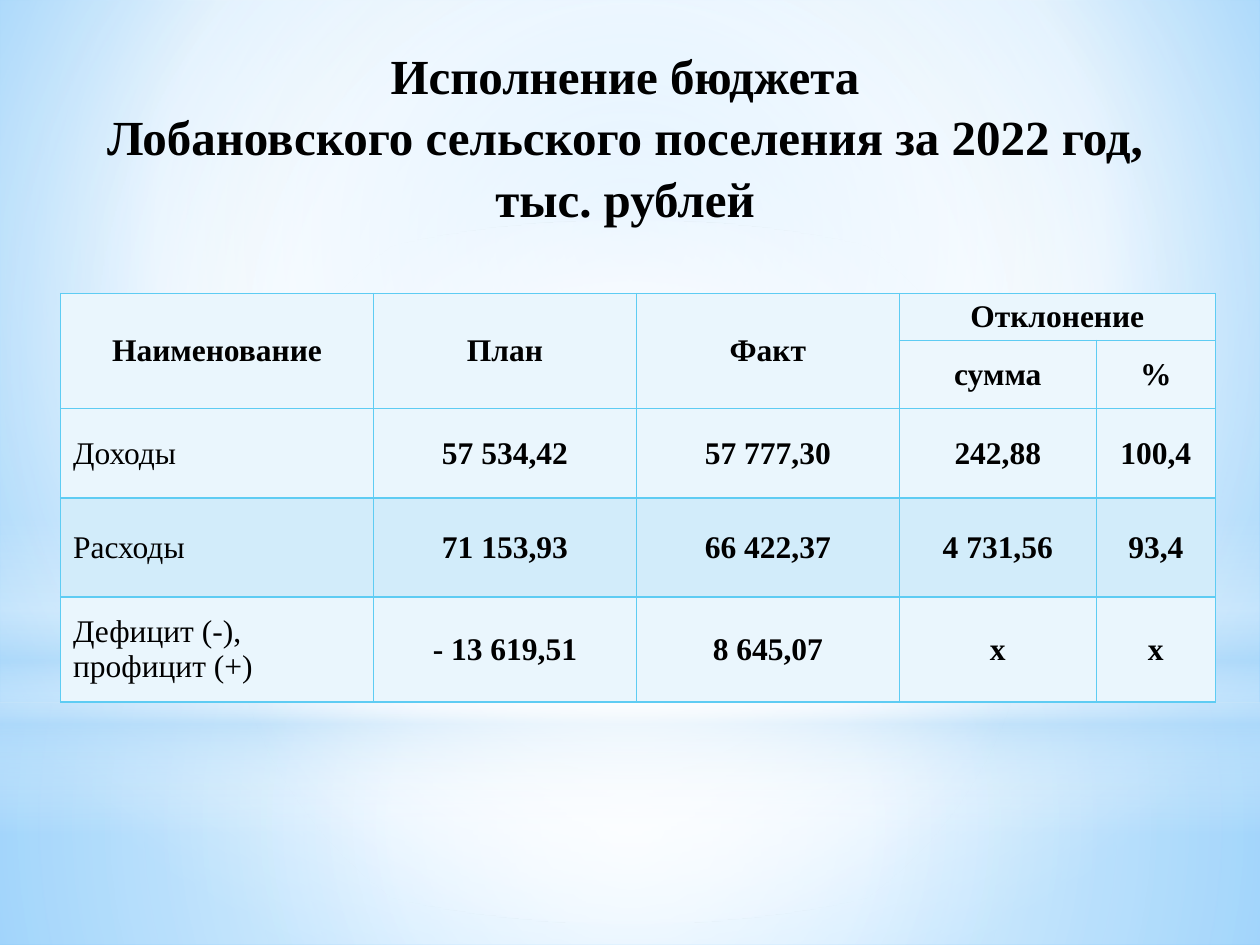
"""Builds a slide with the budget execution table of a rural settlement."""
from lxml.etree import SubElement
from pptx import Presentation
from pptx.dml.color import RGBColor
from pptx.enum.shapes import MSO_SHAPE
from pptx.enum.text import MSO_ANCHOR, PP_ALIGN
from pptx.oxml import parse_xml
from pptx.oxml.ns import nsdecls, qn
from pptx.util import Cm, Pt

FONT = "Times New Roman"
BLACK = RGBColor(0x00, 0x00, 0x00)
WHITE = RGBColor(0xFF, 0xFF, 0xFF)
HAZE = RGBColor(0xB4, 0xDC, 0xFA)
SKY = RGBColor(0x9E, 0xD5, 0xFF)
DEEP_SKY = RGBColor(0x5B, 0xB9, 0xFF)
BORDER = RGBColor(0x5E, 0xCC, 0xF3)
PALE = RGBColor(0xEA, 0xF6, 0xFD)
SUBHEADER = RGBColor(0xED, 0xF7, 0xFD)
BAND = RGBColor(0xD2, 0xEC, 0xFA)

TITLE = ["Исполнение бюджета\vЛобановского сельского поселения за 2022 год,", "тыс. рублей"]
ROWS = [
    ["Наименование", "План", "Факт", "Отклонение", ""],
    ["", "", "", "сумма", "%"],
    ["Доходы", "57 534,42", "57 777,30", "242,88", "100,4"],
    ["Расходы", "71 153,93", "66 422,37", "4 731,56", "93,4"],
    ["Дефицит (-), профицит (+)", "- 13 619,51", "8 645,07", "х", "х"],
]
ROW_FILLS = [PALE, SUBHEADER, PALE, BAND, PALE]
ROW_HEIGHTS = [0.94, 1.38, 1.8, 2.0, 2.11]
COLUMN_WIDTHS = [6.31, 5.3, 5.3, 3.97, 2.4]
MERGES = [((0, 0), (1, 0)), ((0, 1), (1, 1)), ((0, 2), (1, 2)), ((0, 3), (0, 4))]
HEADER_ROWS = 2

CENTRE = (50, 50, 50, 50)
BACKDROP = [(0, SKY, 100), (60, WHITE, 100), (100, DEEP_SKY, 100)]
GLOWS = [
    (MSO_SHAPE.RECTANGLE, 14.17, 4.88, CENTRE,
     [(0, WHITE, 91), (37, WHITE, 76), (100, HAZE, 79)]),
    (MSO_SHAPE.RECTANGLE, 0, 14.17, CENTRE,
     [(0, WHITE, 89), (48, WHITE, 62), (100, HAZE, 79)]),
    (MSO_SHAPE.RECTANGLE, 10.46, 6.35, None,
     [(0, WHITE, 0), (29, WHITE, 30), (45, HAZE, 40), (55, WHITE, 26),
      (65, HAZE, 60), (100, WHITE, 0)]),
    (MSO_SHAPE.OVAL, 4.45, 14.17, CENTRE, [(0, WHITE, 100), (56, WHITE, 0)]),
]


def apply_gradient(fill, element, stops, focus):
    """Swap a solid fill for a circular gradient, or a vertical one without focus."""
    fill.solid()
    solid = element.find(".//" + qn("a:solidFill"))
    gradient = parse_xml(f'<a:gradFill {nsdecls("a")} rotWithShape="1"><a:gsLst/></a:gradFill>')
    for position, color, opacity in stops:
        stop = SubElement(gradient[0], qn("a:gs"), pos=str(position * 1000))
        shade = SubElement(stop, qn("a:srgbClr"), val=str(color))
        if opacity < 100:
            SubElement(shade, qn("a:alpha"), val=str(opacity * 1000))
    if focus:
        circle = SubElement(gradient, qn("a:path"), path="circle")
        edges = {side: str(share * 1000) for side, share in zip("ltrb", focus)}
        SubElement(circle, qn("a:fillToRect"), **edges)
    else:
        SubElement(gradient, qn("a:lin"), ang="5400000", scaled="0")
    solid.getparent().replace(solid, gradient)


def write_text(frame, paragraphs, size=18, bold=True, align=PP_ALIGN.CENTER, spacing=1.0):
    """Fill a text frame with formatted paragraphs."""
    frame.word_wrap = True
    frame.text = "\n".join(paragraphs)
    for paragraph in frame.paragraphs:
        paragraph.alignment = align
        paragraph.line_spacing = spacing
        for run in paragraph.runs:
            run.font.name, run.font.size = FONT, Pt(size)
            run.font.bold, run.font.color.rgb = bold, BLACK


def add_borders(cell):
    """Draw a thin line on all four sides of a cell."""
    properties = cell._tc.get_or_add_tcPr()
    for index, side in enumerate("LRTB"):
        properties.insert(index, parse_xml(
            f'<a:ln{side} {nsdecls("a")} w="{Pt(1)}"><a:solidFill>'
            f'<a:srgbClr val="{BORDER}"/></a:solidFill></a:ln{side}>'))


def add_glows(slide, width):
    """Lay the soft light shapes over the background."""
    for preset, top, height, focus, stops in GLOWS:
        glow = slide.shapes.add_shape(preset, 0, Cm(top), width, Cm(height))
        glow.shadow.inherit = False
        glow.line.fill.background()
        apply_gradient(glow.fill, glow.element, stops, focus)


def add_budget_table(slide):
    """Add the table with its merged header."""
    table = slide.shapes.add_table(
        len(ROWS), len(COLUMN_WIDTHS), Cm(1.22), Cm(5.92),
        Cm(sum(COLUMN_WIDTHS)), Cm(sum(ROW_HEIGHTS))).table
    for column, width in zip(table.columns, COLUMN_WIDTHS):
        column.width = Cm(width)
    for r, (values, color, height) in enumerate(zip(ROWS, ROW_FILLS, ROW_HEIGHTS)):
        table.rows[r].height = Cm(height)
        for c, value in enumerate(values):
            cell = table.cell(r, c)
            cell.fill.solid()
            cell.fill.fore_color.rgb = color
            cell.vertical_anchor = MSO_ANCHOR.MIDDLE
            cell.margin_top = cell.margin_bottom = 0
            add_borders(cell)
            label = c == 0 and r >= HEADER_ROWS
            write_text(cell.text_frame, [value], bold=not label,
                       align=PP_ALIGN.LEFT if label else PP_ALIGN.CENTER)
    for first, last in MERGES:
        table.cell(*first).merge(table.cell(*last))


def main():
    """Build and save the slide."""
    deck = Presentation()
    deck.slide_width, deck.slide_height = Cm(25.4), Cm(19.05)
    slide = deck.slides.add_slide(deck.slide_layouts[6])
    apply_gradient(slide.background.fill, slide.element, BACKDROP, (20, 10, 20, 60))
    add_glows(slide, deck.slide_width)
    add_budget_table(slide)
    title = slide.shapes.add_textbox(Cm(0.3), Cm(0.84), Cm(24.6), Cm(3.76)).text_frame
    title.vertical_anchor = MSO_ANCHOR.MIDDLE
    write_text(title, TITLE, size=28, spacing=1.05)
    deck.save("out.pptx")


if __name__ == "__main__":
    main()
